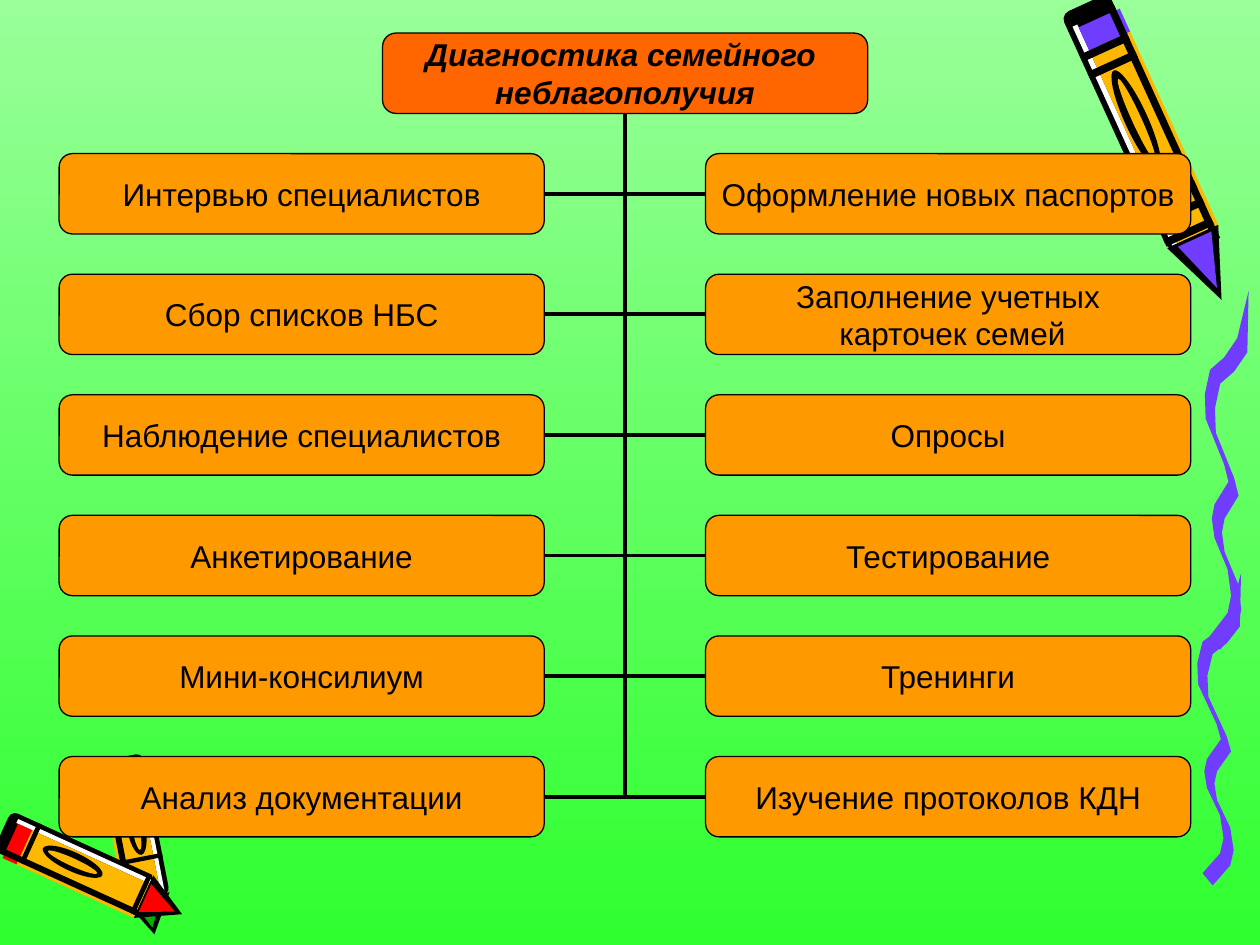
from math import cos, radians, sin

from lxml import etree
from pptx import Presentation
from pptx.dml.color import RGBColor as Rgb
from pptx.enum.shapes import MSO_CONNECTOR as Link, MSO_SHAPE as Kind
from pptx.enum.text import MSO_ANCHOR as Anchor, PP_ALIGN as Align
from pptx.oxml.ns import qn
from pptx.util import Pt

HUES = {
    "top": "99FF99", "base": "2FFF2F", "head": "FF6600", "box": "FF9900",
    "ink": "000000", "white": "FFFFFF", "plum": "703DFF",
    "gold": "FFB800", "red": "FF0000", "leaf": "00B200",
}

ROWS = [
    (["Интервью специалистов"], ["Оформление новых паспортов"]),
    (["Сбор списков НБС"], ["Заполнение учетных", " карточек семей"]),
    (["Наблюдение специалистов"], ["Опросы"]),
    (["Анкетирование"], ["Тестирование"]),
    (["Мини-консилиум"], ["Тренинги"]),
    (["Анализ документации"], ["Изучение протоколов КДН"]),
]
WIDE, HIGH, STEP = 277.2, 45.9, 68.9
HEAD_X, HEAD_Y = 218.6, 18.9
SIDES = [(33.8, 311, 3), (403.2, 403.2, 1)]

# Pencil parts: start and end along the length, then across the width
SHELL = (Kind.ROUNDED_RECTANGLE, "ink", -0.03, 0.79, -0.5, 0.5)
SHINE = (Kind.RECTANGLE, "white", 0.02, 0.78, -0.39, -0.29)
CAP = (Kind.RECTANGLE, "tint", 0.03, 0.11, -0.29, 0.57)
CORE = (Kind.RECTANGLE, "gold", 0.11, 0.78, -0.29, 0.57)
EDGE = (Kind.RECTANGLE, "ink", 0.01, 0.82, 0.36, 0.5)
SLOT = (Kind.OVAL, "ink", 0.2, 0.54, -0.24, 0.2)
HOLE = (Kind.OVAL, "gold", 0.23, 0.51, -0.1, 0.08)
CONE = (Kind.ISOSCELES_TRIANGLE, "ink", 0.78, 1, -0.5, 0.57)
LEAD = (Kind.ISOSCELES_TRIANGLE, "tint", 0.79, 0.96, -0.3, 0.4)
PARTS = [SHELL, SHINE, CAP, CORE, EDGE, SLOT, HOLE, CONE, LEAD]

# Pencils: tail, angle, length, width, side of the shine, tint, bands
PENCILS = [
    (622, 7.1, 65.5, 181, 30, 1, "plum", [0.11, 0.17, 0.62, 0.68, 0.75]),
    (70, 435.6, 79, 100, 24.5, -1, "leaf", [0.55]),
    (4.3, 476, 24.5, 110, 25, -1, "red", [0.12, 0.75]),
]

# Ribbon: bends below its tip; the far edge is the same line moved
BENDS = [
    (-6.5, 27), (-14, 38), (-22, 45), (-25, 59), (-24.5, 73), (-14, 99), (-11.5, 109),
    (-19.5, 122), (-21, 130), (-19.5, 141), (-12, 159), (-10, 174), (-12, 184), (-22, 197),
]
SHIFT_X, SHIFT_Y = 5.8, 8
RIBBONS = [(709.2, 327.6, 0.87), (713.5, 166.3, 1)]

deck = Presentation()
deck.slide_width, deck.slide_height = Pt(720), Pt(540)
slide = deck.slides.add_slide(deck.slide_layouts[6])
shapes = slide.shapes


def paint(shape, hue, rim=0):
    shape.shadow.inherit = False
    shape.fill.solid()
    shape.fill.fore_color.rgb = Rgb.from_string(HUES[hue])
    if rim:
        shape.line.color.rgb = Rgb.from_string(HUES["ink"])
        shape.line.width = Pt(rim)
    else:
        shape.line.fill.background()


def add_box(left, top, lines, hue, bold=False):
    box = shapes.add_shape(Kind.ROUNDED_RECTANGLE, Pt(left), Pt(top), Pt(WIDE), Pt(HIGH))
    paint(box, hue, 0.75)
    frame = box.text_frame
    frame.word_wrap = False
    frame.vertical_anchor = Anchor.MIDDLE
    frame.margin_left = frame.margin_right = frame.margin_top = frame.margin_bottom = 0
    for i, text in enumerate(lines):
        para = frame.add_paragraph() if i else frame.paragraphs[0]
        para.alignment = Align.CENTER
        run = para.add_run()
        run.text = text
        font = run.font
        font.name, font.size = "Arial", Pt(18)
        font.bold = font.italic = bold
        font.color.rgb = Rgb.from_string(HUES["ink"])
    return box


back = slide.background.fill
back.gradient()
back.gradient_angle = 270
for stop, hue in zip(back.gradient_stops, ("top", "base")):
    stop.color.rgb = Rgb.from_string(HUES[hue])

for tail_x, tail_y, angle, length, width, side, tint, bands in PENCILS:
    dx, dy = cos(radians(angle)), sin(radians(angle))
    rings = [(Kind.RECTANGLE, "ink", at, at + 0.025, -0.5, 0.5) for at in bands]
    for kind, hue, start, end, near, far in PARTS + rings:
        along = (start + end) / 2 * length
        off = (near + far) / 2 * width * side
        mid_x = tail_x + along * dx + off * dy
        mid_y = tail_y + along * dy - off * dx
        wide, high = (far - near) * width, (end - start) * length
        part = shapes.add_shape(
            kind, Pt(mid_x - wide / 2), Pt(mid_y - high / 2), Pt(wide), Pt(high))
        part.rotation = angle + 90
        paint(part, tint if hue == "tint" else hue)

for tip_x, tip_y, scale in RIBBONS:
    near = [(tip_x + x, tip_y + y * scale) for x, y in BENDS]
    far = [(x + SHIFT_X, y + SHIFT_Y * scale) for x, y in reversed(near)]
    pen = shapes.build_freeform(Pt(tip_x), Pt(tip_y))
    pen.add_line_segments([(Pt(x), Pt(y)) for x, y in near + far], close=True)
    paint(pen.convert_to_shape(), "plum")

stem = (HEAD_X + WIDE / 2, HEAD_Y + HIGH)
cells = []
for row, pair in enumerate(ROWS, 1):
    top = HEAD_Y + row * STEP
    for lines, (left, edge, site) in zip(pair, SIDES):
        ends = (edge, top + HIGH / 2, *stem)
        link = shapes.add_connector(Link.ELBOW, *[Pt(v) for v in ends])
        link.line.color.rgb = Rgb.from_string(HUES["ink"])
        link.line.width = Pt(2.25)
        props = link._element.spPr
        props.find(qn("a:prstGeom")).set("prst", "bentConnector2")
        etree.SubElement(props, qn("a:effectLst"))
        cells.append((link, left, top, lines, site))

head = add_box(HEAD_X, HEAD_Y, ["Диагностика семейного ", "неблагополучия"], "head", True)
for link, left, top, lines, site in cells:
    link.begin_connect(add_box(left, top, lines, "box"), site)
    link.end_connect(head, 2)

deck.save("out.pptx")
